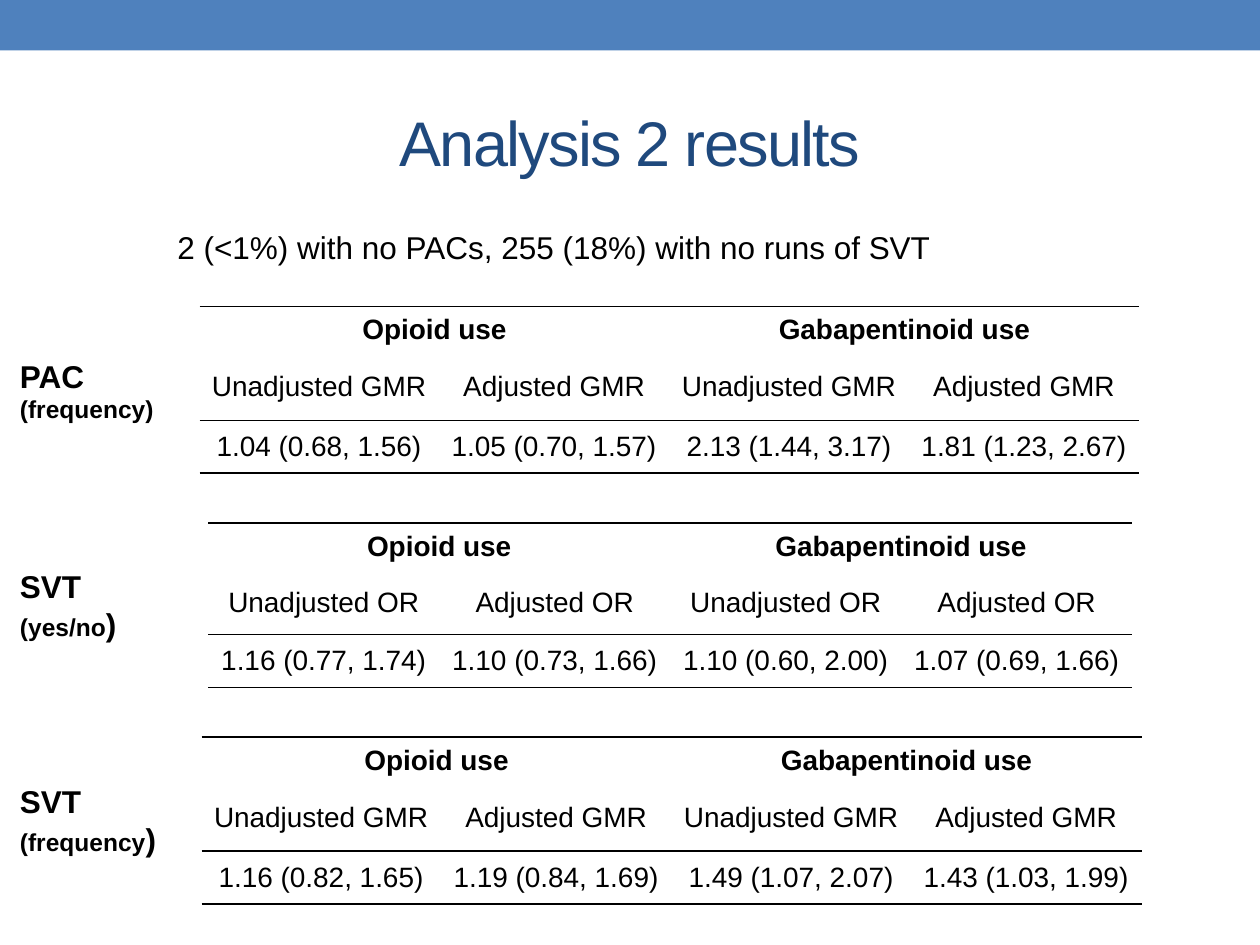
from lxml import etree
from pptx import Presentation
from pptx.dml.color import RGBColor
from pptx.enum.shapes import MSO_SHAPE
from pptx.enum.text import MSO_ANCHOR, PP_ALIGN
from pptx.oxml import parse_xml
from pptx.oxml.ns import qn
from pptx.util import Pt

BLUE = RGBColor(0x4F, 0x81, 0xBD)
NAVY = RGBColor(0x1F, 0x49, 0x7D)
BLACK = RGBColor(0, 0, 0)
CENTER = PP_ALIGN.CENTER
MIDDLE = MSO_ANCHOR.MIDDLE
RECTANGLE = MSO_SHAPE.RECTANGLE
FONT = "Arial"
DRAWING_NS = "http://schemas.openxmlformats.org/drawingml/2006/main"
NO_STYLE_NO_GRID = "{2D5ABB26-0587-4C30-8999-92F81FD0307C}"
LABEL_LEFT, LABEL_WIDTH = 4.3, 102.2

# left, top, column widths, header row height, measure, estimates,
# label top, label height, label lines as (text, size) runs
RESULTS = [
    (114, 175, (136.6, 132), 38, "GMR",
     ("1.04 (0.68, 1.56)", "1.05 (0.70, 1.57)", "2.13 (1.44, 3.17)", "1.81 (1.23, 2.67)"),
     200.2, 46, [[("PAC", 18)], [("(frequency)", 14)]]),
    (119, 298.8, (132, 132), 36.6, "OR",
     ("1.16 (0.77, 1.74)", "1.10 (0.73, 1.66)", "1.10 (0.60, 2.00)", "1.07 (0.69, 1.66)"),
     320.4, 51, [[("SVT", 18)], [("(yes/no", 14), (")", 18)]]),
    (115.2, 421.2, (136.6, 132), 38, "GMR",
     ("1.16 (0.82, 1.65)", "1.19 (0.84, 1.69)", "1.49 (1.07, 2.07)", "1.43 (1.03, 1.99)"),
     443.5, 51, [[("SVT", 18)], [("(frequency", 14), (")", 18)]]),
]


def add_span(para, text, size, color=BLACK, bold=False):
    span = para.add_run()
    span.text = text
    span.font.name = FONT
    span.font.size = Pt(size)
    span.font.bold = bold
    span.font.color.rgb = color
    return span


def add_border(cell, tag):
    """Draw a 1 pt black line on one side: lnT for top, lnB for bottom."""
    cell._tc.get_or_add_tcPr().append(parse_xml(
        f'<a:{tag} xmlns:a="{DRAWING_NS}" w="{Pt(1)}"><a:solidFill>'
        f'<a:srgbClr val="{BLACK}"/></a:solidFill></a:{tag}>'))


deck = Presentation()
deck.slide_width, deck.slide_height = Pt(720), Pt(540)
slide = deck.slides.add_slide(deck.slide_layouts[5])

band = slide.shapes.add_shape(RECTANGLE, 0, 0, deck.slide_width, Pt(28.8))
band.shadow.inherit = False
band.fill.solid()
band.fill.fore_color.rgb = BLUE
band.line.fill.background()

title = slide.shapes.title
title.left, title.top, title.width, title.height = Pt(36), Pt(41.8), Pt(648), Pt(77.8)
title.text_frame.vertical_anchor = MIDDLE
para = title.text_frame.paragraphs[0]
para.alignment = CENTER
span = add_span(para, "Analysis 2 results", 36, NAVY)
span.font._element.set("spc", "-100")

summary = slide.shapes.add_textbox(Pt(94.3), Pt(126.7), Pt(504), Pt(29))
summary.text_frame.word_wrap = True
add_span(summary.text_frame.paragraphs[0],
         "2 (<1%) with no PACs, 255 (18%) with no runs of SVT", 18)

for (left, top, pair, header_height, measure, estimates,
     label_top, label_height, label_lines) in RESULTS:
    widths = pair * 2
    heights = (27.2, header_height, 30.2)
    frame = slide.shapes.add_table(3, 4, Pt(left), Pt(top), Pt(sum(widths)), Pt(sum(heights)))
    table = frame.table
    table.first_row = table.horz_banding = False
    table._tbl.tblPr.find(qn("a:tableStyleId")).text = NO_STYLE_NO_GRID
    for column, width in zip(table.columns, widths):
        column.width = Pt(width)
    for row, height in zip(table.rows, heights):
        row.height = Pt(height)

    rows = [("Opioid use", "", "Gabapentinoid use", ""),
            (f"Unadjusted {measure}", f"Adjusted {measure}") * 2,
            estimates]
    for row_index, texts in enumerate(rows):
        for column_index, text in enumerate(texts):
            cell = table.cell(row_index, column_index)
            cell.vertical_anchor = MIDDLE
            cell.margin_left = cell.margin_right = Pt(5)
            cell.margin_top = cell.margin_bottom = 0
            if row_index != 1:
                add_border(cell, "lnT")
            if row_index == 2:
                add_border(cell, "lnB")
            cell.fill.background()
            para = cell.text_frame.paragraphs[0]
            para.alignment = CENTER
            if text:
                add_span(para, text, 16, bold=row_index == 0)
    for first in (0, 2):
        table.cell(0, first).merge(table.cell(0, first + 1))

    label = slide.shapes.add_textbox(Pt(LABEL_LEFT), Pt(label_top), Pt(LABEL_WIDTH), Pt(label_height))
    label.text_frame.word_wrap = True
    for index, line in enumerate(label_lines):
        para = label.text_frame.add_paragraph() if index else label.text_frame.paragraphs[0]
        for text, size in line:
            add_span(para, text, size, bold=True)

deck.save("out.pptx")
